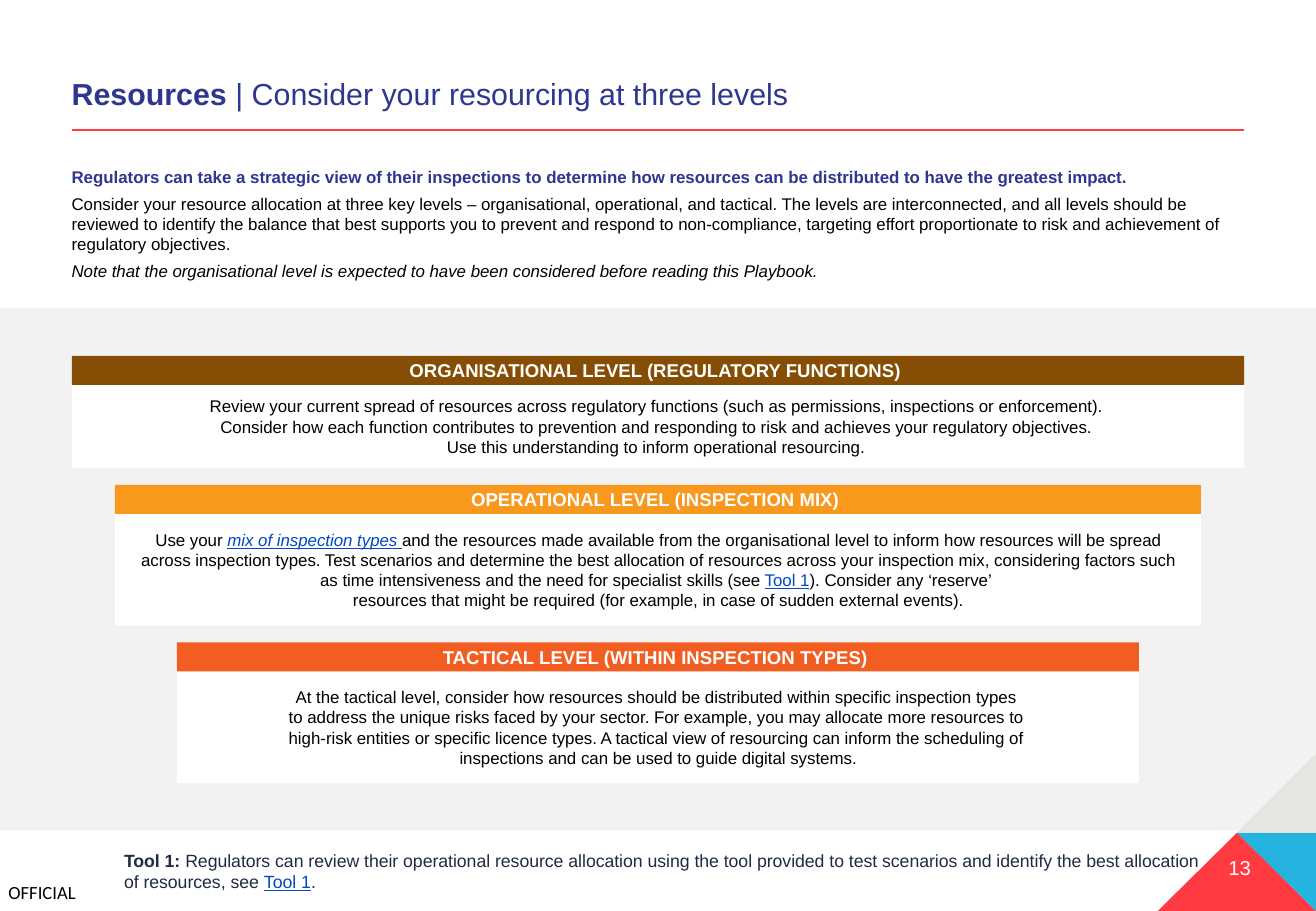
import copy

import pptx
import pptx.dml.color
import pptx.enum.shapes
import pptx.enum.text
import pptx.util
from lxml import etree

Pt = pptx.util.Pt
ALIGN = pptx.enum.text.PP_ALIGN
ANCHOR = pptx.enum.text.MSO_ANCHOR
RECT = pptx.enum.shapes.MSO_SHAPE.RECTANGLE
NAVY, LINK, BLACK, WHITE, INK = "2E368F", "0048C7", "000000", "FFFFFF", "1F2A44"
RED, GREY = "FF3A40", "F2F2F2"


def paint(s, color):
    s.shadow.inherit = False
    s.fill.solid()
    s.fill.fore_color.rgb = pptx.dml.color.RGBColor.from_string(color)
    s.line.fill.background()


def write(s, paragraphs, size, align=ALIGN.LEFT, anchor=ANCHOR.TOP,
          insets=(0, 3.6, 0, 3.6), font="Arial", after=0, spacing=1.0):
    """Each paragraph is a list of (text, colour, style); style holds b, i, u."""
    tf = s.text_frame
    tf.word_wrap = True
    tf.vertical_anchor = anchor
    tf.margin_left, tf.margin_top, tf.margin_right, tf.margin_bottom = map(Pt, insets)
    for n, runs in enumerate(paragraphs):
        p = tf.add_paragraph() if n else tf.paragraphs[0]
        p.alignment = align
        p.space_after = Pt(after)
        p.line_spacing = spacing
        for text, color, style in runs:
            for k, line in enumerate(text.split("\n")):
                if k:
                    p.add_line_break()
                    # The break takes the size of the text before it
                    r._r.getnext().insert(0, copy.deepcopy(r._r.rPr))
                r = p.add_run()
                r.text = line
                r.font.name = font
                r.font.size = Pt(size)
                r.font.bold = "b" in style
                r.font.italic = "i" in style
                r.font.underline = "u" in style
                r.font.color.rgb = pptx.dml.color.RGBColor.from_string(color)


prs = pptx.Presentation()
prs.slide_width, prs.slide_height = Pt(780), Pt(540)
slide = prs.slides.add_slide(prs.slide_layouts[6])
shapes = slide.shapes

# Classification mark
s = shapes.add_textbox(Pt(5), Pt(522), Pt(42.5), Pt(13))
write(s, [[("OFFICIAL", BLACK, "")]], 11, insets=(0, 0, 0, 0), font="Calibri")

# Title and rule
s = shapes.add_textbox(Pt(42.5), Pt(42.5), Pt(694.8), Pt(27.4))
write(s, [[("Resources ", NAVY, "b"),
           ("| Consider your resourcing at three levels", NAVY, "")]],
      18, anchor=ANCHOR.BOTTOM, spacing=0.9)
rule = shapes.add_connector(pptx.enum.shapes.MSO_CONNECTOR.STRAIGHT,
                            Pt(42.5), Pt(77), Pt(737.3), Pt(77))
rule.line.width = Pt(1.25)
rule.line.color.rgb = pptx.dml.color.RGBColor.from_string(RED)
etree.SubElement(rule._element.spPr, pptx.oxml.ns.qn("a:effectLst"))

# Grey band behind the levels
band = shapes.add_shape(RECT, Pt(0), Pt(182.6), Pt(780), Pt(309.6))
paint(band, GREY)

# Introduction
s = shapes.add_textbox(Pt(42.5), Pt(95), Pt(700.6), Pt(76.3))
write(s, [
    [("Regulators can take a strategic view of their inspections to determine how "
      "resources can be distributed to have the greatest impact.", NAVY, "b")],
    [("Consider your resource allocation at three key levels – organisational, "
      "operational, and tactical. The levels are interconnected, and all levels should "
      "be reviewed to identify the balance that best supports you to prevent and respond "
      "to non-compliance, targeting effort proportionate to risk and achievement of "
      "regulatory objectives.", BLACK, "")],
    [("Note that the organisational level is expected to have been considered before "
      "reading this Playbook.", BLACK, "i")],
], 10, after=4)

# Three levels, centred and narrowing downwards
levels = [
    ("ORGANISATIONAL LEVEL (REGULATORY FUNCTIONS) ", "864D04", 694.8, 49.2, [
        ("Review your current spread of resources across regulatory functions (such as "
         "permissions, inspections or enforcement). \n"
         "Consider how each function contributes to prevention and responding to risk and "
         "achieves your regulatory objectives. \n"
         "Use this understanding to inform operational resourcing. ", BLACK, "")]),
    ("OPERATIONAL LEVEL (INSPECTION MIX) ", "F8981D", 643.7, 66.2, [
        ("Use your ", BLACK, ""),
        ("mix of inspection types ", LINK, "iu"),
        ("and the resources made available from the organisational level to inform how "
         "resources will be spread across inspection types. Test scenarios and determine "
         "the best allocation of resources across your inspection mix, considering factors "
         "such as time intensiveness and the need for specialist skills (see ", BLACK, ""),
        ("Tool 1", LINK, "u"),
        ("). Consider any ‘reserve’ \nresources that might be required (for example, in "
         "case of sudden external events).", BLACK, "")]),
    ("TACTICAL LEVEL (WITHIN INSPECTION TYPES) ", "F25E21", 570.2, 66.2, [
        ("At the tactical level, consider how resources should be distributed within "
         "specific inspection types \n"
         "to address the unique risks faced by your sector. For example, you may allocate "
         "more resources to \n"
         "high-risk entities or specific licence types. A tactical view of resourcing can "
         "inform the scheduling of \n"
         "inspections and can be used to guide digital systems.", BLACK, "")]),
]
HEADER, GAP = 17.2, 10
top = 211
for heading, color, width, height, body in levels:
    left = 390 - width / 2
    s = shapes.add_shape(RECT, Pt(left), Pt(top + HEADER), Pt(width), Pt(height))
    paint(s, WHITE)
    write(s, [body], 10, ALIGN.CENTER, ANCHOR.MIDDLE, (11.5, 3.6, 11.5, 3.6))
    s = shapes.add_shape(RECT, Pt(left), Pt(top), Pt(width), Pt(HEADER))
    paint(s, color)
    write(s, [[(heading, WHITE, "b")]], 11, ALIGN.CENTER, ANCHOR.MIDDLE,
          (7.2, 3.6, 7.2, 3.6))
    top += HEADER + height + GAP

# Corner triangles meeting at one apex
apex = (733.2, 493.6)
triangles = [
    (RED, [(686.2, 540), (780, 540)]),
    ("25B3E0", [(780, 540), (780, 493.6)]),
    ("E6E6E1", [(780, 446.6), (780, 493.6)]),
]
for color, corners in triangles:
    outline = shapes.build_freeform(Pt(apex[0]), Pt(apex[1]))
    outline.add_line_segments([(Pt(x), Pt(y)) for x, y in corners], close=True)
    paint(outline.convert_to_shape(), color)

# Page number
s = shapes.add_textbox(Pt(679), Pt(503.5), Pt(62.4), Pt(21.6))
write(s, [[("13", WHITE, "")]], 12, ALIGN.RIGHT)

# Tool note
s = shapes.add_textbox(Pt(0), Pt(492.5), Pt(725.8), Pt(47.5))
write(s, [[("Tool 1: ", INK, "b"),
           ("Regulators can review their operational resource allocation using the tool "
            "provided to test scenarios and identify the best allocation of resources, "
            "see ", INK, ""),
           ("Tool 1", LINK, "u"),
           (".", INK, "")]],
      10.5, anchor=ANCHOR.MIDDLE, insets=(73.5, 3.6, 7.2, 3.6))

prs.save("out.pptx")
